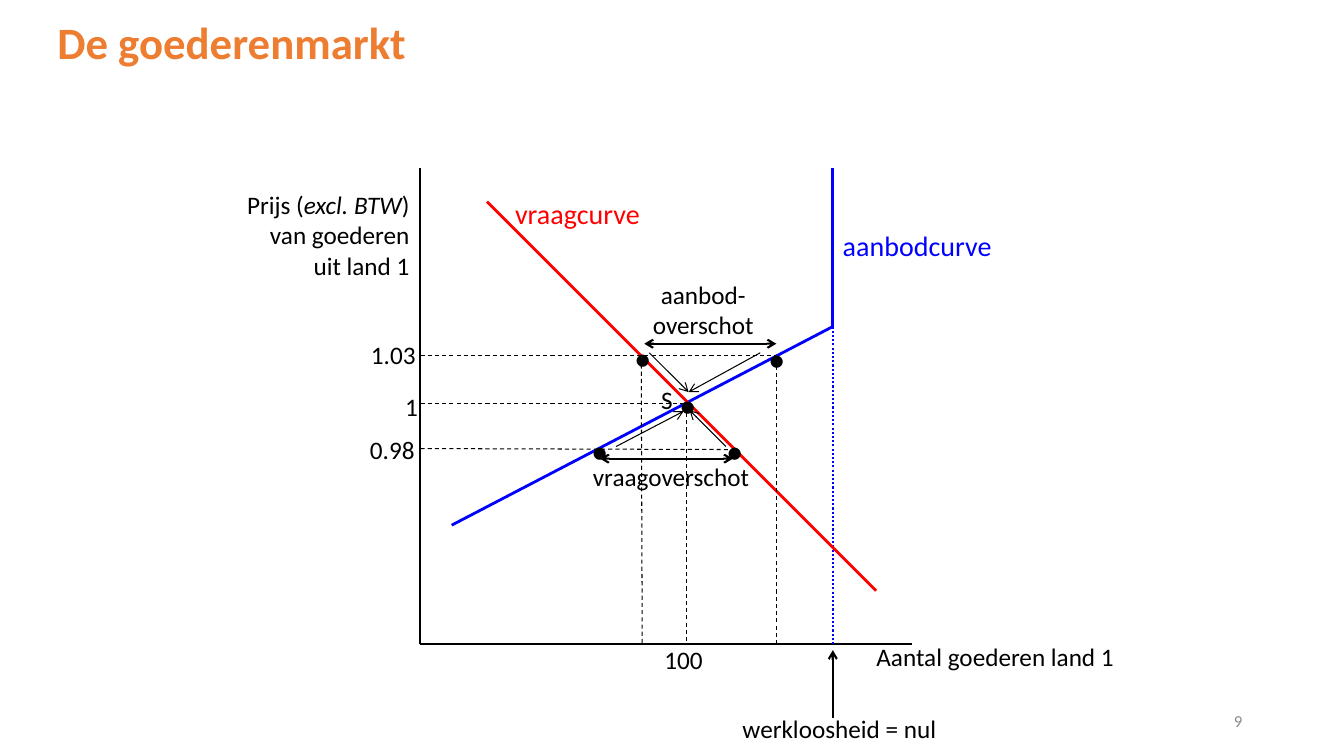
import dataclasses

import pptx
import pptx.dml.color
import pptx.enum.dml
import pptx.enum.shapes
import pptx.enum.text
import pptx.oxml.ns
import pptx.util
from lxml import etree

PX = 9144
ALIGN = pptx.enum.text.PP_ALIGN
DASH = pptx.enum.dml.MSO_LINE


@dataclasses.dataclass(frozen=True)
class Theme:
    """Colours, font, type sizes and line widths."""
    font: str = "Calibri"
    black: str = "000000"
    blue: str = "0000FF"
    red: str = "FF0000"
    orange: str = "ED7D31"
    grey: str = "8C8C8C"
    title: int = 32
    curve: int = 20
    body: int = 18
    small: int = 12
    dot: int = 72
    thin: float = 0.75
    mid: float = 1.5
    thick: float = 2


LOOK = Theme()


def rgb(code):
    """Turn a hex code into a colour."""
    return pptx.dml.color.RGBColor.from_string(code)


def emu(*sizes):
    """Turn px lengths into EMU."""
    return [pptx.util.Emu(size * PX) for size in sizes]


def write(slide, text, box, size=LOOK.body, color=LOOK.black, align=ALIGN.LEFT,
          bold=False, wrap=True, middle=False):
    """Add a text box; stars enclose italic words."""
    frame = slide.shapes.add_textbox(*emu(*box)).text_frame
    frame.word_wrap = wrap
    if middle:
        frame.vertical_anchor = pptx.enum.text.MSO_ANCHOR.MIDDLE
    for row, line in enumerate(text.split("\n")):
        para = frame.add_paragraph() if row else frame.paragraphs[0]
        para.alignment = align
        for part, words in enumerate(line.split("*")):
            run = para.add_run()
            run.text = words
            font = run.font
            font.name, font.size = LOOK.font, pptx.util.Pt(size)
            font.bold, font.italic = bold, part % 2 == 1
            font.color.rgb = rgb(color)


def draw(slide, ends, color=LOOK.black, width=LOOK.thin, dash=None, heads=()):
    """Add a straight line with optional dashes and arrowheads."""
    kind = pptx.enum.shapes.MSO_CONNECTOR.STRAIGHT
    link = slide.shapes.add_connector(kind, *emu(*ends))
    link.line.color.rgb = rgb(color)
    link.line.width = pptx.util.Pt(width)
    if dash:
        link.line.dash_style = dash
    tag = pptx.oxml.ns.qn
    props = link._element.spPr
    for head in heads:
        etree.SubElement(props.find(tag("a:ln")), tag(f"a:{head}")).set("type", "arrow")
    etree.SubElement(props, tag("a:effectLst"))


def add_title(slide, box):
    """Place the slide title."""
    write(slide, "De goederenmarkt", box, size=LOOK.title, color=LOOK.orange,
          bold=True, wrap=False)


def add_number(slide, box):
    """Place the slide number."""
    write(slide, "9", box, size=LOOK.small, color=LOOK.grey, align=ALIGN.RIGHT, middle=True)


def add_market(slide, box):
    """Place the supply and demand diagram, with axes along the box."""
    left, top, wide, high = box
    full = 409
    kink = 157

    def line(ends, **look):
        """Draw a line measured from the box corner."""
        x1, y1, x2, y2 = ends
        draw(slide, (left + x1, top + y1, left + x2, top + y2), **look)

    def label(text, x, y, w, h=40, **look):
        """Write a label measured from the box corner."""
        write(slide, text, (left + x, top + y, w, h), **look)

    for ends in ((0, 0, 0, high), (0, high, wide, high)):
        line(ends, width=LOOK.mid)
    for ends in ((31, 354, full, kink), (full, 0, full, kink)):
        line(ends, color=LOOK.blue, width=LOOK.thick)
    line((full, kink, full, high), color=LOOK.blue, width=LOOK.mid, dash=DASH.ROUND_DOT)
    line((66, 33, 452, 419), color=LOOK.red, width=LOOK.thick)

    guides = ((0, 186, 353, 186), (0, 233, 261, 233), (0, 278, 312, 279),
              (220, 471, 219, 189), (264, 469, 264, 233), (353, high, 353, 192))
    for ends in guides:
        line(ends, dash=DASH.DASH)
    for ends in ((222, 174, 353, 174), (178, 288, 310, 288)):
        line(ends, width=LOOK.mid, heads=("headEnd", "tailEnd"))
    moves = ((227, 183, 266, 222), (337, 183, 266, 222),
             (194, 276, 261, 241), (303, 276, 267, 240))
    for ends in moves:
        line(ends, heads=("tailEnd",))
    line((full, 545, full, 478), width=LOOK.mid, heads=("tailEnd",))

    for x, y in ((222, 138), (177, 92), (310, 93), (135, 184), (269, 184)):
        label(".", x, y, 87, 131, size=LOOK.dot, align=ALIGN.CENTER)

    label("aanbodcurve", full, 55, 181, 44, size=LOOK.curve, color=LOOK.blue)
    label("vraagcurve", 84, 23, 145, 44, size=LOOK.curve, color=LOOK.red, wrap=False)
    label("Prijs (*excl. BTW*)\nvan goederen uit land 1", -185, 16, 184, 101,
          align=ALIGN.RIGHT)
    label("S", 214, 209, 46, align=ALIGN.RIGHT)
    for text, x, y, w in (("100", 232, 467, 59), ("1", -25, 216, 33), ("0.98", -60, 259, 65)):
        label(text, x, y, w, wrap=False)
    notes = (("1.03", -78, 165, 102, 40),
             ("aanbod-\noverschot", 190, 105, 181, 71),
             ("vraagoverschot", 158, 286, 181, 40),
             ("Aantal goederen land 1", 424, 464, 292, 40),
             ("werkloosheid = nul", 258, 536, 315, 40))
    for note in notes:
        label(*note, align=ALIGN.CENTER)


def main():
    """Build and save the slide."""
    deck = pptx.Presentation()
    deck.slide_width, deck.slide_height = emu(1333, 750)
    slide = deck.slides.add_slide(deck.slide_layouts[6])
    add_market(slide, (417, 167, 488, 472))
    add_title(slide, (47, 10, 369, 64))
    add_number(slide, (942, 695, 300, 40))
    deck.save("out.pptx")


if __name__ == "__main__":
    main()
